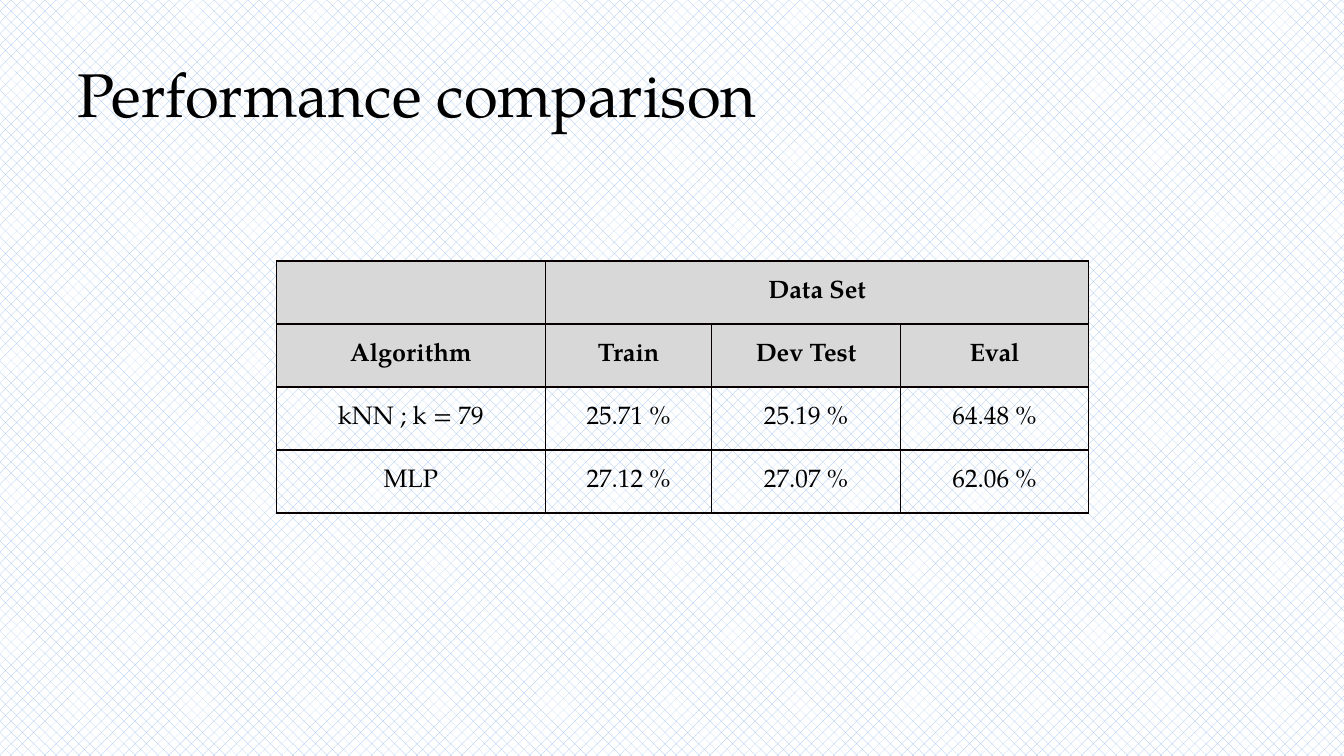
from lxml import etree
from pptx import Presentation
from pptx.dml.color import RGBColor
from pptx.enum.dml import MSO_PATTERN
from pptx.enum.text import MSO_ANCHOR, PP_ALIGN
from pptx.oxml.ns import qn
from pptx.util import Inches, Pt

CENTER = PP_ALIGN.CENTER
MIDDLE = MSO_ANCHOR.MIDDLE
BACKGROUND_PATTERN = MSO_PATTERN.PERCENT_25

COLUMN_WIDTHS = [2.67, 1.65, 1.87, 1.87]
ROW_HEIGHT = 0.625
HEADER_ROWS = 2
RESULTS = [
    ["", "Data Set", "", ""],
    ["Algorithm", "Train", "Dev Test", "Eval"],
    ["kNN ; k = 79", "25.71 %", "25.19 %", "64.48 %"],
    ["MLP", "27.12 %", "27.07 %", "62.06 %"],
]


def color(value):
    return RGBColor.from_string(value)


class SlideBuilder:
    """Holds the style and the current slide, and adds its elements."""

    font_name = "TeX Gyre Pagella"
    text_color = "000000"
    header_fill = "D8D8D8"
    border_color = "080000"
    border_width = Pt(1)

    def __init__(self, slide):
        self.slide = slide

    def background(self, foreground, back):
        fill = self.slide.background.fill
        fill.patterned()
        fill.pattern = BACKGROUND_PATTERN
        fill.fore_color.rgb = color(foreground)
        fill.back_color.rgb = color(back)

    def format_text(self, paragraph, size, bold=False):
        for run in paragraph.runs:
            run.font.name = self.font_name
            run.font.size = Pt(size)
            run.font.bold = bold
            run.font.color.rgb = color(self.text_color)

    def title(self, text, left, top, width, height):
        box = self.slide.shapes.add_textbox(
            Inches(left), Inches(top), Inches(width), Inches(height))
        text_frame = box.text_frame
        text_frame.word_wrap = True
        text_frame.vertical_anchor = MIDDLE
        text_frame.text = text
        self.format_text(text_frame.paragraphs[0], 44)

    def cell_borders(self, cell):
        properties = cell._tc.get_or_add_tcPr()
        for side in ("a:lnL", "a:lnR", "a:lnT", "a:lnB"):
            line = etree.SubElement(properties, qn(side), w=str(self.border_width))
            fill = etree.SubElement(line, qn("a:solidFill"))
            etree.SubElement(fill, qn("a:srgbClr"), val=self.border_color)

    def cell(self, cell, text, header):
        cell.margin_left = cell.margin_right = Inches(0.04)
        cell.margin_top = cell.margin_bottom = 0
        cell.vertical_anchor = MIDDLE
        self.cell_borders(cell)
        if header:
            cell.fill.solid()
            cell.fill.fore_color.rgb = color(self.header_fill)
        else:
            cell.fill.background()
        if text:
            cell.text_frame.text = text
            paragraph = cell.text_frame.paragraphs[0]
            paragraph.alignment = CENTER
            self.format_text(paragraph, 18, bold=header)

    def table(self, rows, left, top):
        frame = self.slide.shapes.add_table(
            len(rows), len(COLUMN_WIDTHS), Inches(left), Inches(top),
            Inches(sum(COLUMN_WIDTHS)), Inches(ROW_HEIGHT * len(rows)))
        table = frame.table
        table.first_row = False
        table.horz_banding = False
        for column, width in zip(table.columns, COLUMN_WIDTHS):
            column.width = Inches(width)
        for row_index, texts in enumerate(rows):
            table.rows[row_index].height = Inches(ROW_HEIGHT)
            for column_index, text in enumerate(texts):
                self.cell(table.cell(row_index, column_index), text,
                          header=row_index < HEADER_ROWS)
        table.cell(0, 1).merge(table.cell(0, len(COLUMN_WIDTHS) - 1))


def main():
    presentation = Presentation()
    presentation.slide_width = Inches(13.33)
    presentation.slide_height = Inches(7.5)
    slide = presentation.slides.add_slide(presentation.slide_layouts[6])
    builder = SlideBuilder(slide)
    builder.background("9ABFEF", "FFFFFF")
    builder.title("Performance comparison", 0.67, 0.3, 12, 1.25)
    builder.table(RESULTS, 2.74, 2.59)
    presentation.save("out.pptx")


if __name__ == "__main__":
    main()
